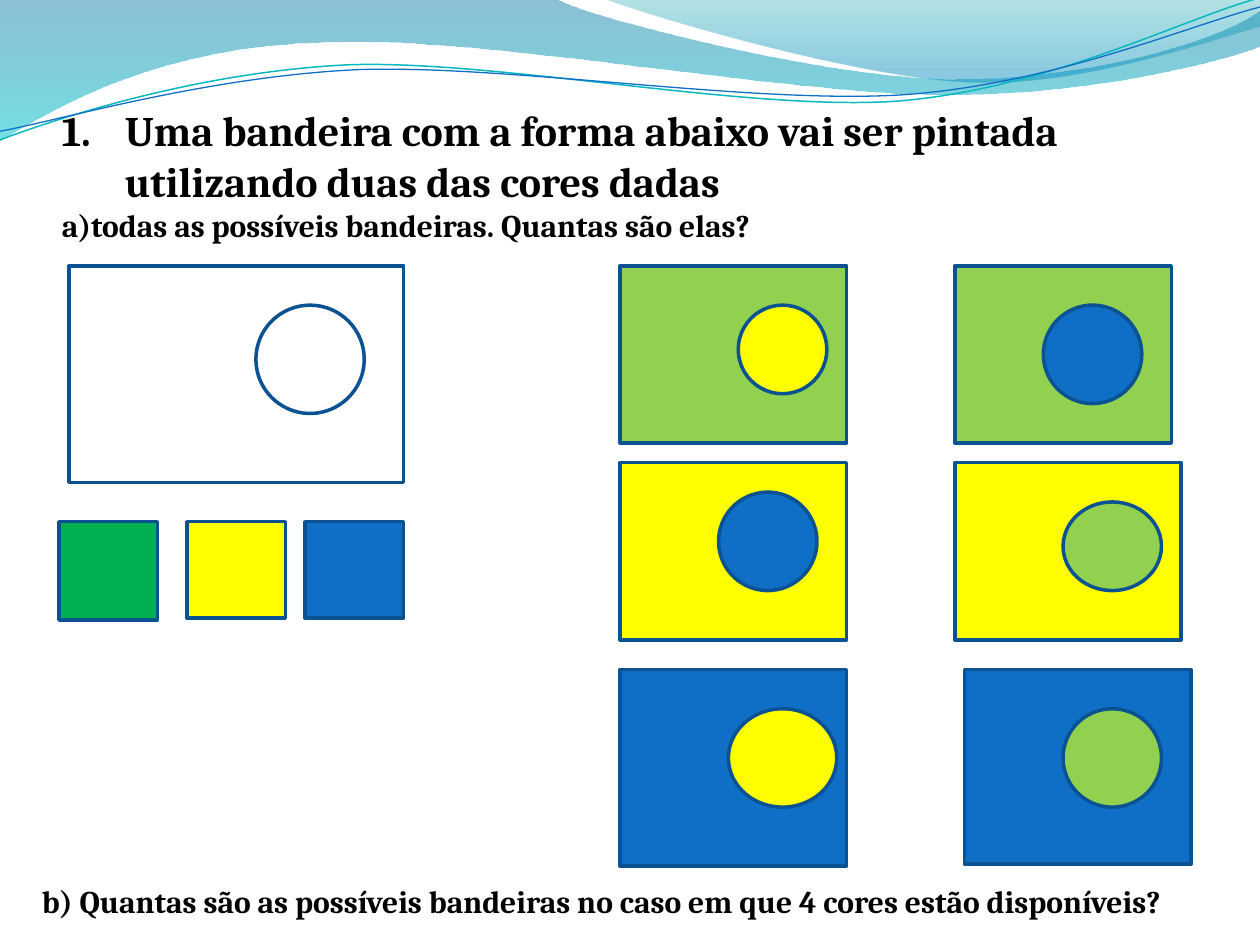
from dataclasses import dataclass

from lxml.etree import SubElement
from pptx import Presentation
from pptx.dml.color import RGBColor
from pptx.enum.shapes import MSO_SHAPE
from pptx.enum.text import MSO_ANCHOR, MSO_AUTO_SIZE, PP_ALIGN
from pptx.oxml.ns import qn
from pptx.util import Pt


@dataclass(frozen=True)
class Theme:
    font: str = "Cambria"
    question_size: int = 24
    item_size: int = 18
    outline_width: int = 2
    text: str = "000000"
    outline: str = "0B5292"
    white: str = "FFFFFF"
    yellow: str = "FFFF00"
    blue: str = "0F6FC6"
    light_green: str = "92D050"
    green: str = "00B050"
    teal: str = "0AB8BF"
    # Gradient stops: position, colour, opacity in percent
    long_wave: tuple = ((0, "0074A1", 45), (1, "00C6CF", 55))
    short_wave: tuple = ((0, "00A1A9", 30), (0.8, "008BBF", 45))


THEME = Theme()
GRID = 45 / 8  # points in one grid step; boxes are given in grid steps


def rgb(colour):
    return RGBColor.from_string(colour)


def on_grid(box):
    return [Pt(steps * GRID) for steps in box]


def add_path(shapes, start, segments, close):
    """Add an outline; a segment is one line end or the three points of a Bézier curve."""
    builder = shapes.build_freeform(Pt(start[0]), Pt(start[1]))
    points = [(Pt(x), Pt(y)) for segment in segments for x, y in segment]
    builder.add_line_segments(points, close=close)
    shape = builder.convert_to_shape()
    shape.shadow.inherit = False
    lines = iter(list(shape.element.spPr.iter(qn("a:lnTo"))))
    for segment in segments:
        first, *others = [next(lines) for _ in segment]
        if others:
            first.tag = qn("a:cubicBezTo")
            for line in others:
                first.append(line[0])
                line.getparent().remove(line)
    return shape


def add_wave(slide, start, segments, stops):
    shape = add_path(slide.shapes, start, segments, close=True)
    shape.line.fill.background()
    shape.fill.gradient()
    shape.fill.gradient_angle = 270
    for stop, (position, colour, _) in zip(shape.fill.gradient_stops, stops):
        stop.position = position
        stop.color.rgb = rgb(colour)
    colours = shape.element.spPr.iter(qn("a:srgbClr"))
    for element, (_, _, opacity) in zip(colours, stops):
        SubElement(element, qn("a:alpha")).set("val", str(opacity * 1000))


def add_wave_line(group, start, segments, colour, width):
    shape = add_path(group.shapes, start, segments, close=False)
    shape.rotation = 357.3
    shape.fill.background()
    shape.line.color.rgb = rgb(colour)
    shape.line.width = Pt(width)


def add_header_waves(slide):
    add_wave(slide, (0, 0), [
        [(317, -1)],
        [(343, 12), (478, 45), (546, 45)], [(614, 45), (690, 27), (720, 6)],
        [(721, 26)],
        [(708, 32), (626, 55), (537, 54)], [(448, 54), (275, 20), (185, 24)],
        [(93, 26), (33, 60), (-1, 81)],
    ], THEME.long_wave)
    add_wave(slide, (345, -1), [
        [(367, 8), (491, 45), (554, 47)], [(616, 50), (692, 23), (720, 15)],
        [(720, 0)],
    ], THEME.short_wave)
    group = slide.shapes.add_group_shape()
    add_wave_line(group, (-1.4, 63), [
        [(34, 51.5), (114.5, 29.5), (199.5, 29.5)], [(284.5, 30.5), (426, 67), (512, 65)],
        [(599, 62), (676, 26), (720.5, 16)],
    ], THEME.teal, 0.85)
    add_wave_line(group, (-1.1, 58), [
        [(33, 53.5), (118, 32.5), (204.5, 32.5)], [(290.5, 33.5), (429, 63), (515.5, 61.5)],
        [(601.5, 59.5), (679, 30), (721.5, 21)],
    ], THEME.blue, 0.75)


def add_outlined(slide, preset, box, colour):
    shape = slide.shapes.add_shape(preset, *on_grid(box))
    shape.shadow.inherit = False
    shape.fill.solid()
    shape.fill.fore_color.rgb = rgb(colour)
    shape.line.color.rgb = rgb(THEME.outline)
    shape.line.width = Pt(THEME.outline_width)


def add_flag(slide, box, field_colour, disc, disc_colour):
    """Draw a flag; the disc's left and top are measured from the flag's corner."""
    left, top, _, _ = box
    disc_left, disc_top, width, height = disc
    add_outlined(slide, MSO_SHAPE.RECTANGLE, box, field_colour)
    add_outlined(slide, MSO_SHAPE.OVAL, (left + disc_left, top + disc_top, width, height), disc_colour)


def add_swatches(slide, left, top):
    for offset, height, colour in ((0, 10, THEME.green), (13, 9.8, THEME.yellow), (25, 9.8, THEME.blue)):
        add_outlined(slide, MSO_SHAPE.RECTANGLE, (left + offset, top, 10, height), colour)


def add_answers(slide, left, top):
    second, second_row, third_row = left + 34, top + 20, top + 41
    green, yellow, blue = THEME.light_green, THEME.yellow, THEME.blue
    for box, field_colour, disc, disc_colour in (
        ((left, top, 23, 18), green, (12, 4, 9, 9), yellow),
        ((second, top, 22, 18), green, (9, 4, 10, 10), blue),
        ((left, second_row, 23, 18), yellow, (10, 3, 10, 10), blue),
        ((second, second_row, 23, 18), yellow, (11, 4, 10, 9), green),
        ((left, third_row, 23, 20), blue, (11, 4, 11, 10), yellow),
        ((second + 1, third_row, 23, 19.8), blue, (10, 4, 10, 10), green),
    ):
        add_flag(slide, box, field_colour, disc, disc_colour)


def format_paragraph(paragraph, size, indent=0):
    paragraph.alignment = PP_ALIGN.LEFT
    paragraph.font.name = THEME.font
    paragraph.font.size = Pt(size)
    paragraph.font.bold = True
    paragraph.font.color.rgb = rgb(THEME.text)
    properties = paragraph._p.get_or_add_pPr()
    properties.set("marL", str(Pt(indent)))
    properties.set("indent", str(Pt(-indent)))
    return properties


def fill_question(title, box):
    title.left, title.top, title.width, title.height = on_grid(box)
    frame = title.text_frame
    frame.word_wrap = True
    frame.auto_size = MSO_AUTO_SIZE.NONE
    frame.vertical_anchor = MSO_ANCHOR.TOP
    question = frame.paragraphs[0]
    question.text = "Uma bandeira com a forma abaixo vai ser pintada utilizando duas das cores dadas"
    properties = format_paragraph(question, THEME.question_size, indent=36)
    SubElement(properties, qn("a:buFont")).set("typeface", "+mj-lt")
    SubElement(properties, qn("a:buAutoNum")).set("type", "arabicPeriod")
    item = frame.add_paragraph()
    item.text = "a)todas as possíveis bandeiras. Quantas são elas?"
    format_paragraph(item, THEME.item_size, indent=27)


def add_second_item(slide, box):
    frame = slide.shapes.add_textbox(*on_grid(box)).text_frame
    frame.word_wrap = True
    paragraph = frame.paragraphs[0]
    paragraph.text = "b) Quantas são as possíveis bandeiras no caso em que 4 cores estão disponíveis?"
    format_paragraph(paragraph, THEME.item_size)


def main():
    presentation = Presentation()
    presentation.slide_width, presentation.slide_height = Pt(720), Pt(540)
    slide = presentation.slides.add_slide(presentation.slide_layouts[5])
    add_header_waves(slide)
    fill_question(slide.shapes.title, (5, 10, 123, 15.5))
    add_flag(slide, (7, 27, 34, 22), THEME.white, (19, 4, 11, 11), THEME.white)
    add_swatches(slide, left=6, top=53)
    add_answers(slide, left=63, top=27)
    add_second_item(slide, (3, 89, 125, 5.2))
    presentation.save("out.pptx")


if __name__ == "__main__":
    main()
